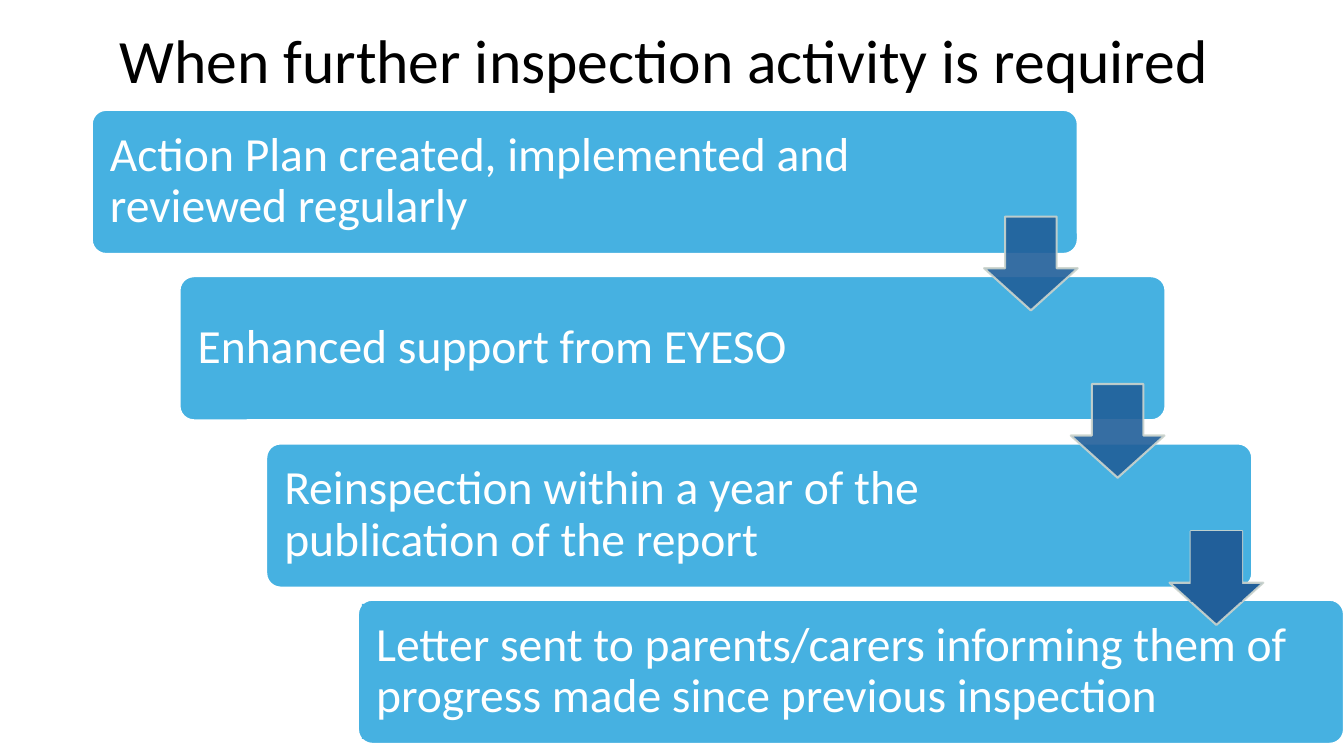
from pptx import Presentation
from pptx.dml.color import RGBColor
from pptx.enum.shapes import MSO_SHAPE as Shape
from pptx.enum.text import MSO_ANCHOR as Anchor, PP_ALIGN as Align
from pptx.oxml.ns import qn
from pptx.util import Emu, Pt
from lxml import etree

PX = 9144  # 100 px to the inch
FONT = "Calibri"
BLACK = RGBColor(0x00, 0x00, 0x00)
WHITE = RGBColor(0xFF, 0xFF, 0xFF)
SKY = RGBColor(0x46, 0xB1, 0xE1)
NAVY = RGBColor(0x21, 0x5F, 0x9A)
MIST = RGBColor(0xCC, 0xD4, 0xCD)

CARD_W, CARD_H = 978, 143
LABEL_DX, LABEL_DY, LABEL_H = 4, 4, 134
ARROW = 93

# Card left, card top, label width, label fill, wording
STEPS = [
    (91, 109, 823, None, "Action Plan created, implemented and reviewed regularly"),
    (178, 274, 790, None, "Enhanced support from EYESO"),
    (264, 440, 790, None, "Reinspection within a year of the publication of the report"),
    (355, 595, 951, SKY,
     "Letter sent to parents/carers informing them of progress made since previous inspection"),
]
# Arrow left, arrow top, fill opacity in percent
ARROWS = [(976, 215, 90), (1062, 381, 90), (1160, 527, 100)]


def px(*lengths):
    return [Emu(length * PX) for length in lengths]


def set_opacity(properties, percent):
    color = properties.find(qn("a:solidFill"))[0]
    etree.SubElement(color, qn("a:alpha")).set("val", str(percent * 1000))


def add_block(slide, kind, box, fill, line=None, adjustments=()):
    block = slide.shapes.add_shape(kind, *px(*box))
    block.shadow.inherit = False
    for index, value in enumerate(adjustments):
        block.adjustments[index] = value
    block.fill.solid()
    block.fill.fore_color.rgb = fill
    if line is None:
        block.line.fill.background()
    else:
        block.line.color.rgb = line
        block.line.width = Pt(1.5)
    return block


def write(holder, wording, size, color, align, inset_x, inset_y):
    frame = holder.text_frame
    frame.word_wrap = True
    frame.vertical_anchor = Anchor.MIDDLE
    frame.margin_left, frame.margin_right = px(inset_x, inset_x)
    frame.margin_top, frame.margin_bottom = px(inset_y, inset_y)
    paragraph = frame.paragraphs[0]
    paragraph.alignment = align
    paragraph.line_spacing = 0.9
    run = paragraph.add_run()
    run.text = wording
    run.font.name = FONT
    run.font.size = Pt(size)
    run.font.color.rgb = color


def add_step(slide, left, top, label_width, label_fill, wording):
    add_block(slide, Shape.ROUNDED_RECTANGLE, (left, top, CARD_W, CARD_H),
              SKY, WHITE, [0.1])
    box = (left + LABEL_DX, top + LABEL_DY, label_width, LABEL_H)
    if label_fill is None:
        label = slide.shapes.add_textbox(*px(*box))
    else:
        label = add_block(slide, Shape.RECTANGLE, box, label_fill)
    write(label, wording, 34, WHITE, Align.LEFT, 14, 14)


def add_arrow(slide, left, top, opacity):
    arrow = add_block(slide, Shape.DOWN_ARROW, (left, top, ARROW, ARROW),
                      NAVY, MIST, [0.55, 0.45])
    properties = arrow.element.spPr
    set_opacity(properties.find(qn("a:ln")), 90)
    if opacity < 100:
        set_opacity(properties, opacity)
    else:
        # Solid stem over the opaque arrow
        add_block(slide, Shape.RECTANGLE, (left + 21, top, 51, 70), NAVY)


def main():
    deck = Presentation()
    deck.slide_width, deck.slide_height = px(1333, 750)
    slide = deck.slides.add_slide(deck.slide_layouts[6])

    # Title
    title = slide.shapes.add_textbox(*px(91, 1, 1150, 124))
    write(title, "When further inspection activity is required ", 44, BLACK,
          Align.CENTER, 10, 5)

    # Staircase of steps
    for step in STEPS:
        add_step(slide, *step)

    # Arrows from each step to the next
    for arrow in ARROWS:
        add_arrow(slide, *arrow)

    deck.save("out.pptx")


if __name__ == "__main__":
    main()
